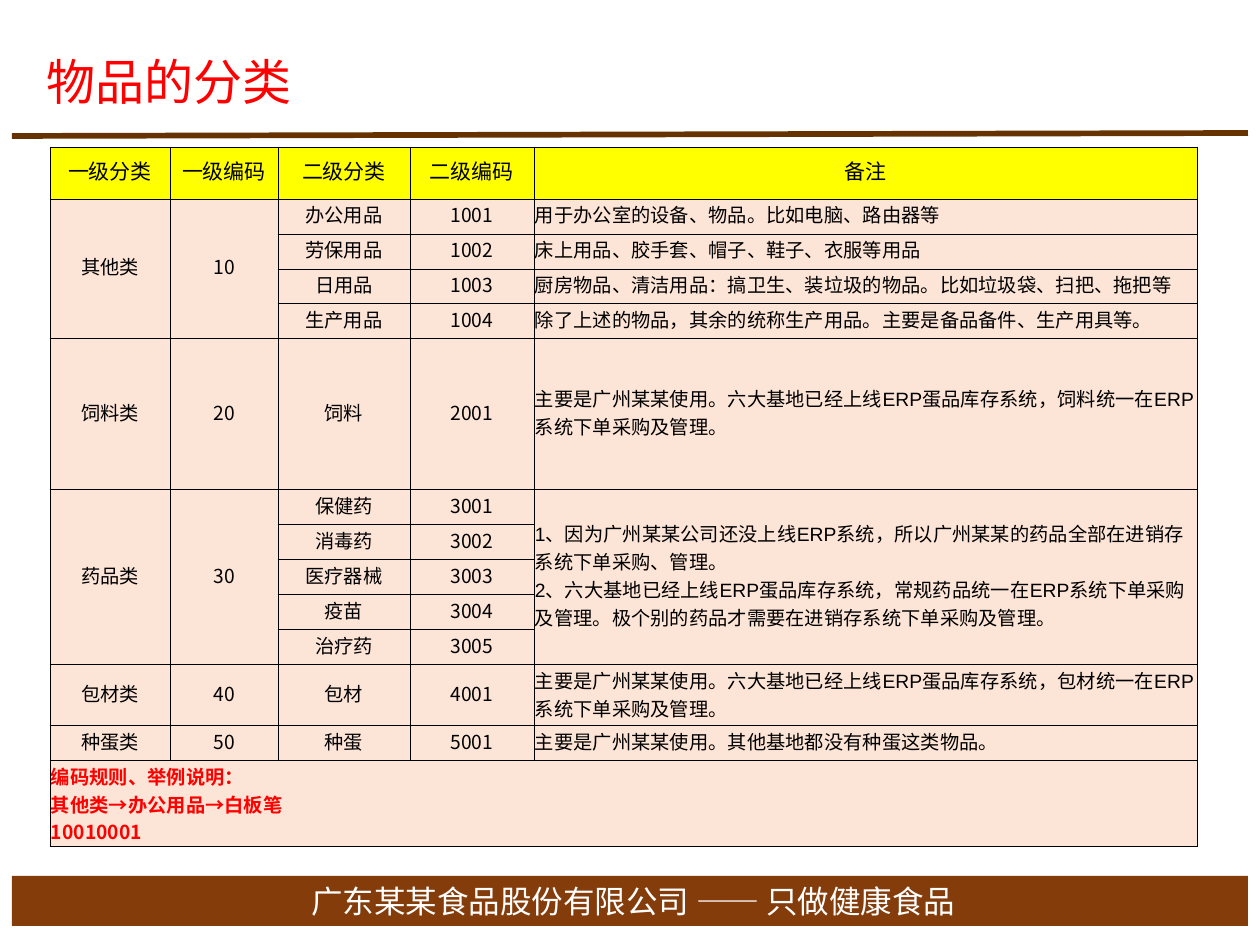
from lxml import etree
from pptx import Presentation, util as u
from pptx.dml.color import RGBColor
from pptx.enum import lang, shapes, text
from pptx.oxml.ns import qn

PX = 914400 / 126
COLORS = {"brown": "843C0B", "rule": "663300", "red": "FF0000", "white": "FFFFFF",
          "black": "000000", "head": "FFFF00", "body": "FCE4D6"}
CJK = "Noto Sans CJK SC"


def px(n):
    return u.Emu(round(n * PX))


def add_run(p, words, size, color, font=CJK, bold=False):
    """Add one run whose East Asian glyphs always use the CJK font."""
    r = p.add_run()
    r.text = words
    f = r.font
    f.size, f.name, f.bold = u.Pt(size), font, bold
    f.color.rgb = RGBColor.from_string(COLORS[color])
    f.language_id = lang.MSO_LANGUAGE_ID.SIMPLIFIED_CHINESE
    etree.SubElement(r._r.get_or_add_rPr(), qn("a:ea"), typeface=CJK)


prs = Presentation()
prs.slide_width, prs.slide_height = px(1260), px(945)
s = prs.slides.add_slide(prs.slide_layouts[6])

# Footer band
sp = s.shapes.add_shape(shapes.MSO_SHAPE.RECTANGLE, px(12), px(876), px(1236), px(50))
sp.shadow.inherit = False
sp.fill.solid()
sp.fill.fore_color.rgb = RGBColor.from_string(COLORS["brown"])
sp.line.fill.background()
tf = sp.text_frame
tf.word_wrap = True
tf.vertical_anchor = text.MSO_ANCHOR.MIDDLE
p = tf.paragraphs[0]
p.alignment = text.PP_ALIGN.CENTER
add_run(p, " ", 16, "white", "Calibri")
add_run(p, "广东某某食品股份有限公司 —— 只做健康食品", 18, "white")

# Rule under the title
rule = s.shapes.add_connector(shapes.MSO_CONNECTOR.STRAIGHT, px(12), px(136), px(1248), px(133))
rule.line.color.rgb = RGBColor.from_string(COLORS["rule"])
rule.line.width = u.Pt(3.25)
etree.SubElement(rule._element.spPr, qn("a:effectLst"))

# Title
tf = s.shapes.add_textbox(px(34), px(45), px(707), px(72)).text_frame
tf.word_wrap = True
tf.auto_size = text.MSO_AUTO_SIZE.SHAPE_TO_FIT_TEXT
add_run(tf.paragraphs[0], "物品的分类", 28, "red")

# Classification table; None marks a cell covered by a merge
rows = [
    ("一级分类", "一级编码", "二级分类", "二级编码", "备注"),
    ("其他类", "10", "办公用品", "1001", "用于办公室的设备、物品。比如电脑、路由器等"),
    (None, None, "劳保用品", "1002", "床上用品、胶手套、帽子、鞋子、衣服等用品"),
    (None, None, "日用品", "1003", "厨房物品、清洁用品：搞卫生、装垃圾的物品。比如垃圾袋、扫把、拖把等"),
    (None, None, "生产用品", "1004", "除了上述的物品，其余的统称生产用品。主要是备品备件、生产用具等。"),
    ("饲料类", "20", "饲料", "2001",
     "主要是广州某某使用。六大基地已经上线ERP蛋品库存系统，饲料统一在ERP系统下单采购及管理。"),
    ("药品类", "30", "保健药", "3001",
     "1、因为广州某某公司还没上线ERP系统，所以广州某某的药品全部在进销存系统下单采购、管理。\n"
     "2、六大基地已经上线ERP蛋品库存系统，常规药品统一在ERP系统下单采购及管理。"
     "极个别的药品才需要在进销存系统下单采购及管理。"),
    (None, None, "消毒药", "3002", None),
    (None, None, "医疗器械", "3003", None),
    (None, None, "疫苗", "3004", None),
    (None, None, "治疗药", "3005", None),
    ("包材类", "40", "包材", "4001",
     "主要是广州某某使用。六大基地已经上线ERP蛋品库存系统，包材统一在ERP系统下单采购及管理。"),
    ("种蛋类", "50", "种蛋", "5001", "主要是广州某某使用。其他基地都没有种蛋这类物品。"),
    ("编码规则、举例说明：\n其他类→办公用品→白板笔\n10010001", None, None, None, None),
]
widths = [120, 108, 132, 124, 663]
heights = [52] + [35] * 4 + [151] + [35] * 5 + [61, 35, 86]
last = len(rows) - 1
merges = [(1, 0, 4, 0), (1, 1, 4, 1), (6, 0, 10, 0), (6, 1, 10, 1), (6, 4, 10, 4), (last, 0, last, 4)]

table = s.shapes.add_table(len(rows), len(widths), px(50), px(147),
                           px(sum(widths)), px(sum(heights))).table
for column, w in zip(table.columns, widths):
    column.width = px(w)
for row, h in zip(table.rows, heights):
    row.height = px(h)

for i, row in enumerate(rows):
    for j, words in enumerate(row):
        cell = table.cell(i, j)
        cell.margin_left = cell.margin_right = cell.margin_top = px(1)
        cell.margin_bottom = px(6)
        cell.vertical_anchor = text.MSO_ANCHOR.TOP if i == last else text.MSO_ANCHOR.MIDDLE
        tcPr = cell._tc.get_or_add_tcPr()
        for side in ("a:lnL", "a:lnR", "a:lnT", "a:lnB"):
            ln = etree.SubElement(tcPr, qn(side), w=str(u.Pt(0.5)))
            fill = etree.SubElement(ln, qn("a:solidFill"))
            etree.SubElement(fill, qn("a:srgbClr"), val=COLORS["black"])
        cell.fill.solid()
        cell.fill.fore_color.rgb = RGBColor.from_string(COLORS["body" if i else "head"])
        if words is None:
            continue
        centred = i == 0 or (j < 4 and i < last)
        tf = cell.text_frame
        for n, line in enumerate(words.split("\n")):
            p = tf.add_paragraph() if n else tf.paragraphs[0]
            p.alignment = text.PP_ALIGN.CENTER if centred else text.PP_ALIGN.LEFT
            add_run(p, line, 11 if i else 12, "red" if i == last else "black",
                    CJK if line.isdigit() else "Arial", i == last)

for top, left, bottom, right in merges:
    table.cell(top, left).merge(table.cell(bottom, right))

prs.save("out.pptx")
